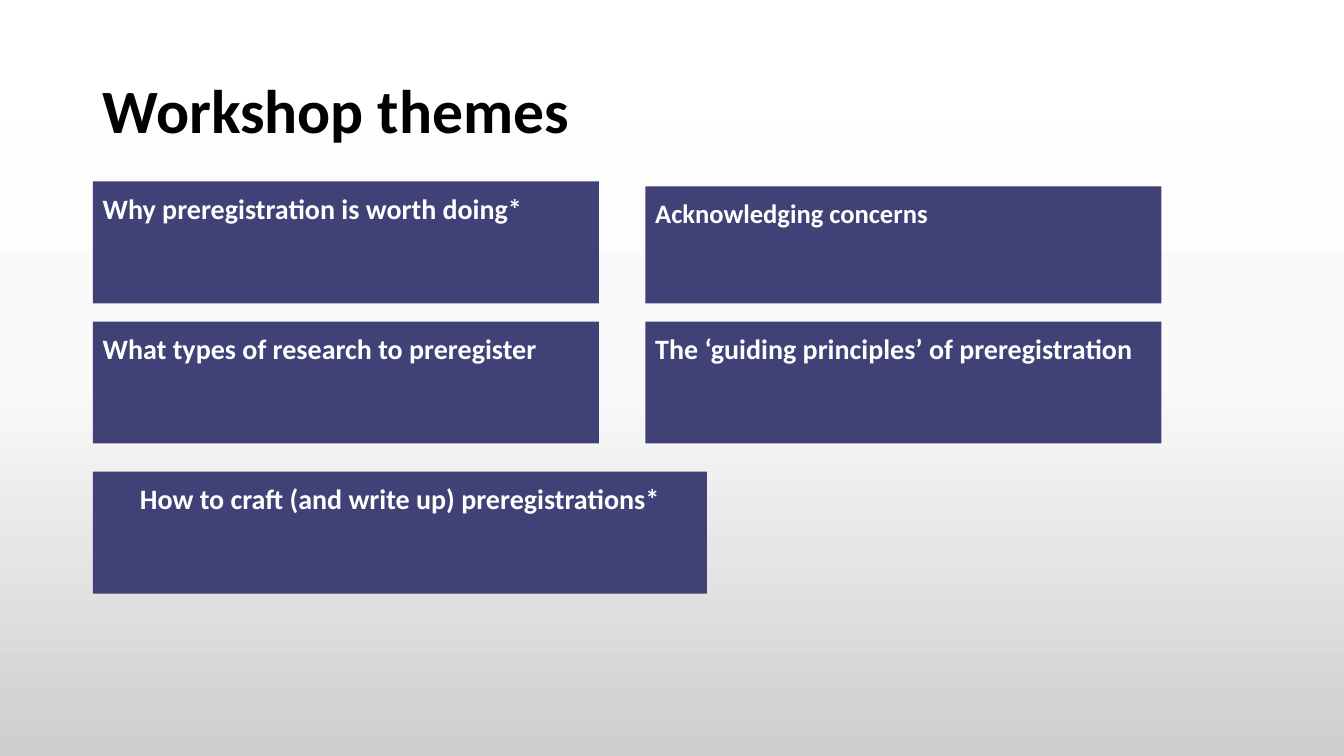
from copy import deepcopy

from pptx import Presentation
from pptx.dml.color import RGBColor
from pptx.enum.shapes import MSO_SHAPE
from pptx.enum.text import MSO_ANCHOR, MSO_AUTO_SIZE, PP_ALIGN
from pptx.oxml.ns import qn
from pptx.util import Inches, Pt

RECTANGLE = MSO_SHAPE.RECTANGLE
LEFT, CENTER = PP_ALIGN.LEFT, PP_ALIGN.CENTER
TOP, MIDDLE = MSO_ANCHOR.TOP, MSO_ANCHOR.MIDDLE
NO_AUTOFIT = MSO_AUTO_SIZE.NONE
TITLE_ONLY = 5

FONT = "Calibri"
COLORS = {
    "title": "000000",
    "theme": "404177",
    "theme_text": "FFFFFF",
    "sky": "FFFFFF",
    "haze": "FAFAFA",
    "ground": "CECECE",
}

# Grid in inches: (left, width) of each column, bottom edge of each row
COLUMNS = [(0.92, 5.02), (6.4, 5.12)]
WIDE_COLUMN = (0.92, 6.09)
ROW_BOTTOMS = [3.01, 4.4, 5.89]
ROW_HEIGHT = 1.21
SHORT_HEIGHT = 1.16


def color(name):
    return RGBColor.from_string(COLORS[name])


def paint_background(page):
    """Fill the page with a three-stop gradient running downwards."""
    fill = page.background.fill
    fill.gradient()
    fill.gradient_angle = 270
    stop_list = page.element.find(".//" + qn("a:gsLst"))
    stop_list.append(deepcopy(stop_list[-1]))
    for stop, position, name in zip(
        fill.gradient_stops, (0, 0.5, 1), ("sky", "haze", "ground")
    ):
        stop.position = position
        stop.color.rgb = color(name)


def write(frame, text, *, size, color_name, align=LEFT, anchor=TOP, inset=0.1,
          spacing=1.0):
    frame.word_wrap = True
    frame.auto_size = NO_AUTOFIT
    frame.vertical_anchor = anchor
    frame.margin_left = frame.margin_right = Inches(0.1)
    frame.margin_top = frame.margin_bottom = Inches(inset)
    para = frame.paragraphs[0]
    para.alignment = align
    para.line_spacing = spacing
    span = para.add_run()
    span.text = text
    span.font.name = FONT
    span.font.size = Pt(size)
    span.font.bold = True
    span.font.color.rgb = color(color_name)


def add_title(page, text):
    title = page.shapes.title
    title.left, title.top = Inches(0.92), Inches(0.4)
    title.width, title.height = Inches(9.71), Inches(1.45)
    write(title.text_frame, text, size=44, color_name="title",
          anchor=MIDDLE, inset=0.05, spacing=0.9)


def add_theme(page, text, column, row, *, height=ROW_HEIGHT, size=20, align=LEFT):
    """Add a theme box that stands on the bottom edge of its row."""
    left, width = column
    box = page.shapes.add_shape(
        RECTANGLE, Inches(left), Inches(ROW_BOTTOMS[row] - height),
        Inches(width), Inches(height),
    )
    box.shadow.inherit = False
    box.fill.solid()
    box.fill.fore_color.rgb = color("theme")
    box.line.fill.background()
    write(box.text_frame, text, size=size, color_name="theme_text", align=align)


def main():
    deck = Presentation()
    deck.slide_width, deck.slide_height = Inches(13.33), Inches(7.5)
    page = deck.slides.add_slide(deck.slide_layouts[TITLE_ONLY])
    paint_background(page)
    add_title(page, "Workshop themes")

    first, second = COLUMNS
    add_theme(page, "Why preregistration is worth doing*", first, 0)
    add_theme(page, "Acknowledging concerns", second, 0,
              height=SHORT_HEIGHT, size=19)
    add_theme(page, "What types of research to preregister", first, 1)
    add_theme(page, "The ‘guiding principles’ of preregistration", second, 1)
    add_theme(page, "How to craft (and write up) preregistrations*",
              WIDE_COLUMN, 2, align=CENTER)
    deck.save("out.pptx")


if __name__ == "__main__":
    main()
